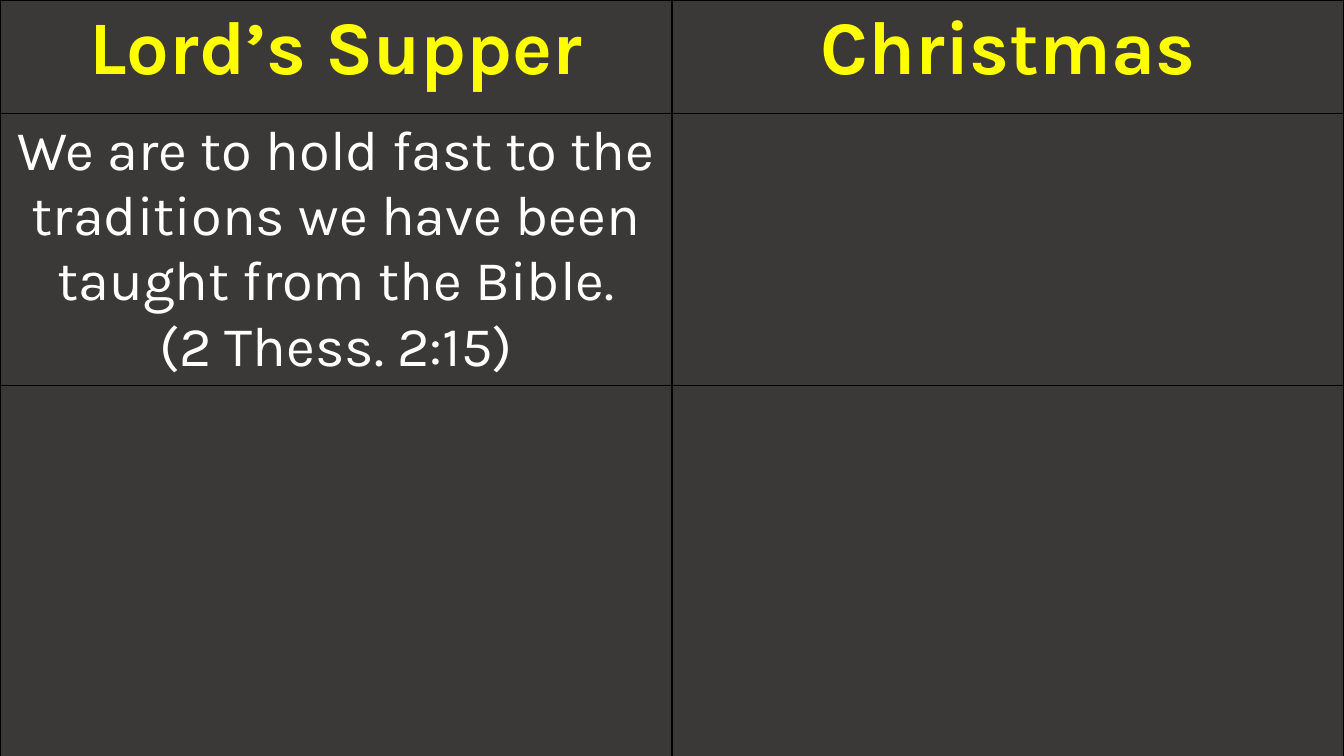
from dataclasses import dataclass

import pptx
import pptx.dml.color
import pptx.enum.text
import pptx.oxml
import pptx.oxml.ns
import pptx.util

Inches = pptx.util.Inches
RGB = pptx.dml.color.RGBColor.from_string


@dataclass(frozen=True)
class Theme:
    font: str = "Karla"
    background: str = "000000"
    cell_fill: str = "3B3838"
    border: str = "000000"
    border_width: float = 1
    heading_color: str = "FFFF00"
    heading_size: float = 54
    body_color: str = "FFFFFF"
    body_size: float = 40


class SlideBuilder:
    def __init__(self, slide, theme):
        self.slide = slide
        self.theme = theme
        slide.background.fill.solid()
        slide.background.fill.fore_color.rgb = RGB(theme.background)

    def add_comparison(self, rows, column_widths, row_heights):
        """Add a table from the top left corner, with the first row as headings."""
        table = self.slide.shapes.add_table(
            len(rows), len(column_widths), 0, 0,
            Inches(sum(column_widths)), Inches(sum(row_heights))).table
        for column, width in zip(table.columns, column_widths):
            column.width = Inches(width)
        for row_index, (statements, height) in enumerate(zip(rows, row_heights)):
            table.rows[row_index].height = Inches(height)
            for column_index, statement in enumerate(statements):
                cell = table.cell(row_index, column_index)
                self.add_borders(cell)
                cell.fill.solid()
                cell.fill.fore_color.rgb = RGB(self.theme.cell_fill)
                if statement:
                    self.add_statement(cell, statement, heading=row_index == 0)

    def add_statement(self, cell, statement, heading):
        theme = self.theme
        cell.text_frame.text = statement
        paragraph = cell.text_frame.paragraphs[0]
        paragraph.alignment = pptx.enum.text.PP_ALIGN.CENTER
        for run in paragraph.runs:
            run.font.name = theme.font
            run.font.bold = heading
            run.font.size = pptx.util.Pt(
                theme.heading_size if heading else theme.body_size)
            run.font.color.rgb = RGB(
                theme.heading_color if heading else theme.body_color)

    def add_borders(self, cell):
        properties = cell._tc.get_or_add_tcPr()
        width = pptx.util.Pt(self.theme.border_width)
        for side in ("lnL", "lnR", "lnT", "lnB"):
            properties.append(pptx.oxml.parse_xml(
                f'<a:{side} {pptx.oxml.ns.nsdecls("a")} w="{width}"><a:solidFill>'
                f'<a:srgbClr val="{self.theme.border}"/></a:solidFill></a:{side}>'))


def main():
    presentation = pptx.Presentation()
    presentation.slide_width = Inches(13.33)
    presentation.slide_height = Inches(7.5)
    blank_layout = presentation.slide_layouts[6]
    builder = SlideBuilder(presentation.slides.add_slide(blank_layout), Theme())
    builder.add_comparison(
        rows=[
            ("Lord’s Supper", "Christmas"),
            ("We are to hold fast to the traditions we have been taught "
             "from the Bible.\v(2 Thess. 2:15)", ""),
            ("", ""),
        ],
        column_widths=[13.33 / 2] * 2,
        row_heights=[1.13, 2.35, 4.02])
    presentation.save("out.pptx")


if __name__ == "__main__":
    main()
